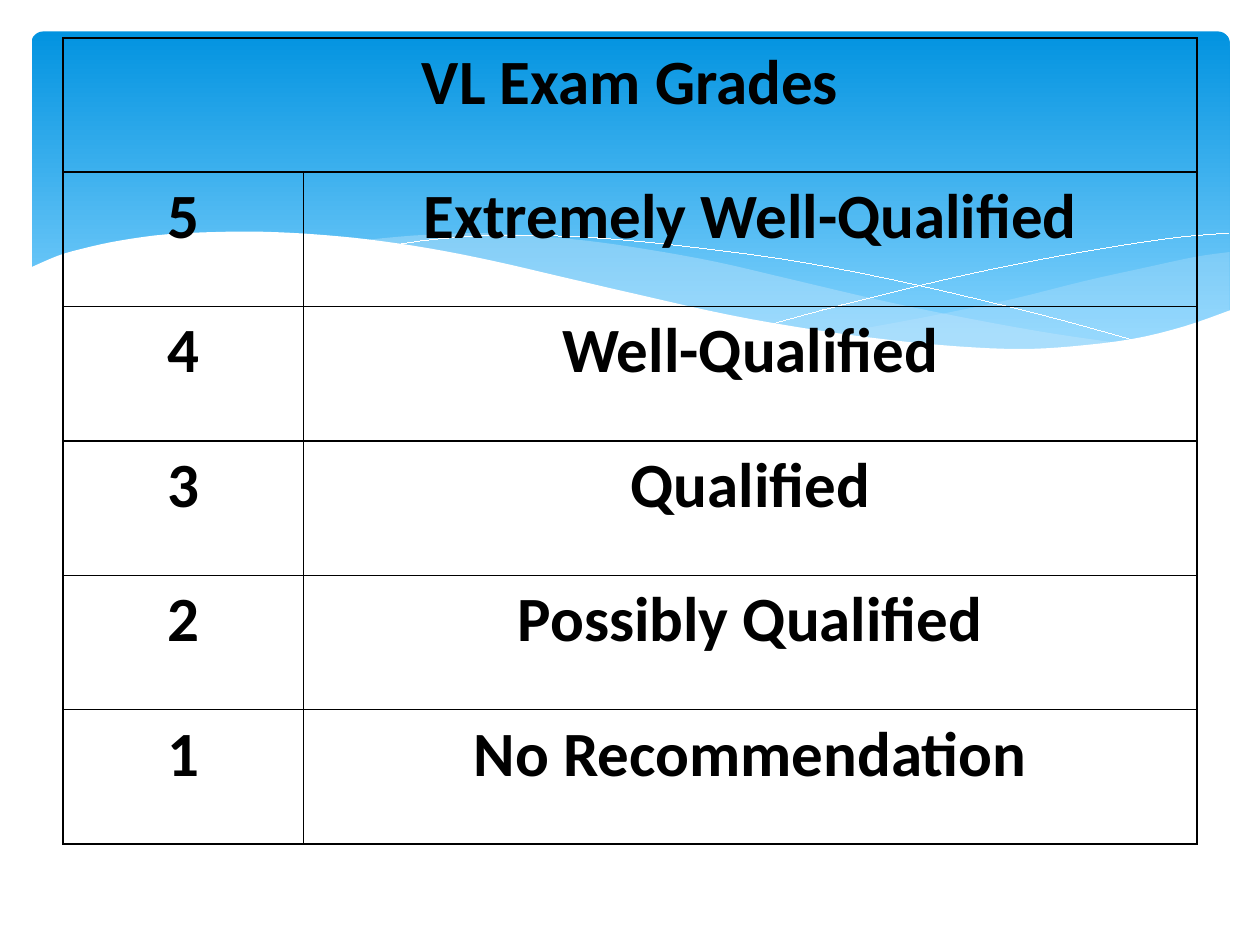
from dataclasses import dataclass

import lxml.etree
import pptx
import pptx.dml.color
import pptx.enum.shapes
import pptx.enum.text
import pptx.oxml.ns
import pptx.util

Inches = pptx.util.Inches
qn = pptx.oxml.ns.qn
Point = tuple[float, float]

COLORS = {
    "sky_top": "0293E0",
    "sky_bottom": "83D3FE",
    "mist": "C6E7FC",
    "white": "FFFFFF",
    "black": "000000",
}
GRADE_FONT = {"name": "Calibri", "size": pptx.util.Pt(36), "bold": True}
TABLE_FLAGS = {"first_row": False, "horz_banding": False}
PARAGRAPH_INDENT = {"marL": Inches(0.38), "indent": -Inches(0.38)}
TITLE = "VL Exam Grades"
GRADES = [
    ("5", "Extremely Well-Qualified"),
    ("4", "Well-Qualified"),
    ("3", "Qualified"),
    ("2", "Possibly Qualified"),
    ("1", "No Recommendation"),
]


@dataclass
class Wave:
    edges: list[list[Point]]
    color: str
    opacity: int = 100
    filled: bool = True


WAVES = [
    Wave([
        [(9.76, 2), (9.48, 2.04), (9.06, 2.13), (8.61, 2.23), (8.05, 2.37),
         (7.53, 2.48), (7.06, 2.57), (6.61, 2.65)],
        [(6.61, 2.65), (7.05, 2.71), (7.57, 2.76), (8.03, 2.78), (8.54, 2.76),
         (8.97, 2.7), (9.35, 2.62), (9.76, 2.47)],
    ], "mist", 29),
    Wave([
        [(8.93, 2.73), (8.37, 2.65), (7.75, 2.54), (7.06, 2.4), (6.29, 2.22),
         (5.69, 2.08), (5.14, 1.98), (4.65, 1.91), (4.2, 1.87), (3.8, 1.85),
         (3.28, 1.87), (2.86, 1.91)],
        [(2.86, 1.91), (3.42, 1.99), (4.04, 2.11), (4.49, 2.22), (5.3, 2.4),
         (6.01, 2.55), (6.65, 2.66), (7.22, 2.74), (7.73, 2.77), (8.18, 2.78),
         (8.57, 2.77), (8.93, 2.73)],
    ], "mist", 40),
    Wave([
        [(3.09, 1.95), (3.44, 1.9), (3.87, 1.87), (4.33, 1.87), (4.89, 1.9),
         (5.56, 1.97), (6.36, 2.08), (7.27, 2.26), (8.31, 2.51), (9.07, 2.72)],
    ], "white", filled=False),
    Wave([
        [(6.13, 2.57), (6.53, 2.46), (7.2, 2.29), (7.76, 2.16), (8.36, 2.04),
         (8.95, 1.94), (9.38, 1.88), (9.75, 1.85)],
    ], "white", filled=False),
    Wave([
        [(9.77, 2.46), (9.4, 2.59), (8.99, 2.69), (8.5, 2.75), (8.09, 2.77),
         (7.61, 2.75), (7.08, 2.7), (6.48, 2.62), (5.79, 2.5), (5.03, 2.33),
         (4.47, 2.2), (3.91, 2.07), (3.4, 1.97), (2.92, 1.9), (2.5, 1.86),
         (2.11, 1.84), (1.77, 1.84), (1.32, 1.86), (0.95, 1.91), (0.67, 1.97),
         (0.46, 2.03), (0.23, 2.13)],
        [(0.23, 3.29), (9.77, 3.29)],
    ], "white"),
]


def rgb(name: str) -> pptx.dml.color.RGBColor:
    return pptx.dml.color.RGBColor.from_string(COLORS[name])


def smooth(points: list[Point], steps: int = 4) -> list[Point]:
    if len(points) < 3:
        return points
    padded = [points[0], *points, points[-1]]
    curve = []
    for a, b, c, d in zip(padded, padded[1:], padded[2:], padded[3:]):
        for step in range(steps):
            t = step / steps
            curve.append(tuple(
                q + t * (r - p) / 2
                + t**2 * (2 * p - 5 * q + 4 * r - s) / 2
                + t**3 * (3 * q - p - 3 * r + s) / 2
                for p, q, r, s in zip(a, b, c, d)
            ))
    return [*curve, points[-1]]


def draw_sky(slide) -> None:
    sky = slide.shapes.add_shape(
        pptx.enum.shapes.MSO_SHAPE.ROUNDED_RECTANGLE,
        Inches(0.25), Inches(0.25), Inches(9.51), Inches(2.7),
    )
    sky.shadow.inherit = False
    sky.adjustments[0] = 0.034
    sky.line.fill.background()
    sky.fill.gradient()
    sky.fill.gradient_angle = 270
    stops = [(0, "sky_top"), (0.9, "sky_bottom")]
    for stop, (position, color) in zip(sky.fill.gradient_stops, stops):
        stop.position = position
        stop.color.rgb = rgb(color)


def draw_wave(slide, wave: Wave) -> None:
    outline = [
        (Inches(x), Inches(y)) for edge in wave.edges for x, y in smooth(edge)
    ]
    builder = slide.shapes.build_freeform(*outline[0])
    builder.add_line_segments(outline[1:], close=wave.filled)
    ribbon = builder.convert_to_shape()
    ribbon.shadow.inherit = False
    if not wave.filled:
        ribbon.fill.background()
        ribbon.line.color.rgb = rgb(wave.color)
        ribbon.line.width = pptx.util.Emu(1)
        return
    ribbon.line.fill.background()
    ribbon.fill.solid()
    ribbon.fill.fore_color.rgb = rgb(wave.color)
    if wave.opacity < 100:
        tint = ribbon.fill._xPr.find(".//" + qn("a:srgbClr"))
        lxml.etree.SubElement(tint, qn("a:alpha"), val=str(wave.opacity * 1000))


def add_borders(cell) -> None:
    properties = cell._tc.get_or_add_tcPr()
    for side in ("a:lnL", "a:lnR", "a:lnT", "a:lnB"):
        border = lxml.etree.SubElement(
            properties, qn(side), w=str(pptx.util.Pt(1))
        )
        ink = lxml.etree.SubElement(border, qn("a:solidFill"))
        lxml.etree.SubElement(ink, qn("a:srgbClr"), val=COLORS["black"])


def write_cell(cell, text: str) -> None:
    paragraph = cell.text_frame.paragraphs[0]
    paragraph.alignment = pptx.enum.text.PP_ALIGN.CENTER
    for attribute, value in PARAGRAPH_INDENT.items():
        paragraph._p.get_or_add_pPr().set(attribute, str(value))
    run = paragraph.add_run()
    run.text = text
    for attribute, value in GRADE_FONT.items():
        setattr(run.font, attribute, value)
    run.font.color.rgb = rgb("black")


def draw_grades(slide) -> None:
    row_count = len(GRADES) + 1
    grades = slide.shapes.add_table(
        row_count, 2, Inches(0.5), Inches(0.3), Inches(9), Inches(6.4)
    ).table
    for attribute, value in TABLE_FLAGS.items():
        setattr(grades, attribute, value)
    for column, width in zip(grades.columns, (1.91, 7.09)):
        column.width = Inches(width)
    for row in grades.rows:
        row.height = Inches(6.4 / row_count)
    for cell in grades.iter_cells():
        add_borders(cell)
        cell.fill.background()
    grades.cell(0, 0).merge(grades.cell(0, 1))
    write_cell(grades.cell(0, 0), TITLE)
    for row, entry in enumerate(GRADES, start=1):
        for column, text in enumerate(entry):
            write_cell(grades.cell(row, column), text)


def main() -> None:
    deck = pptx.Presentation()
    deck.slide_width, deck.slide_height = Inches(10), Inches(7.5)
    slide = deck.slides.add_slide(deck.slide_layouts[6])
    draw_sky(slide)
    for wave in WAVES:
        draw_wave(slide, wave)
    draw_grades(slide)
    deck.save("out.pptx")


if __name__ == "__main__":
    main()
